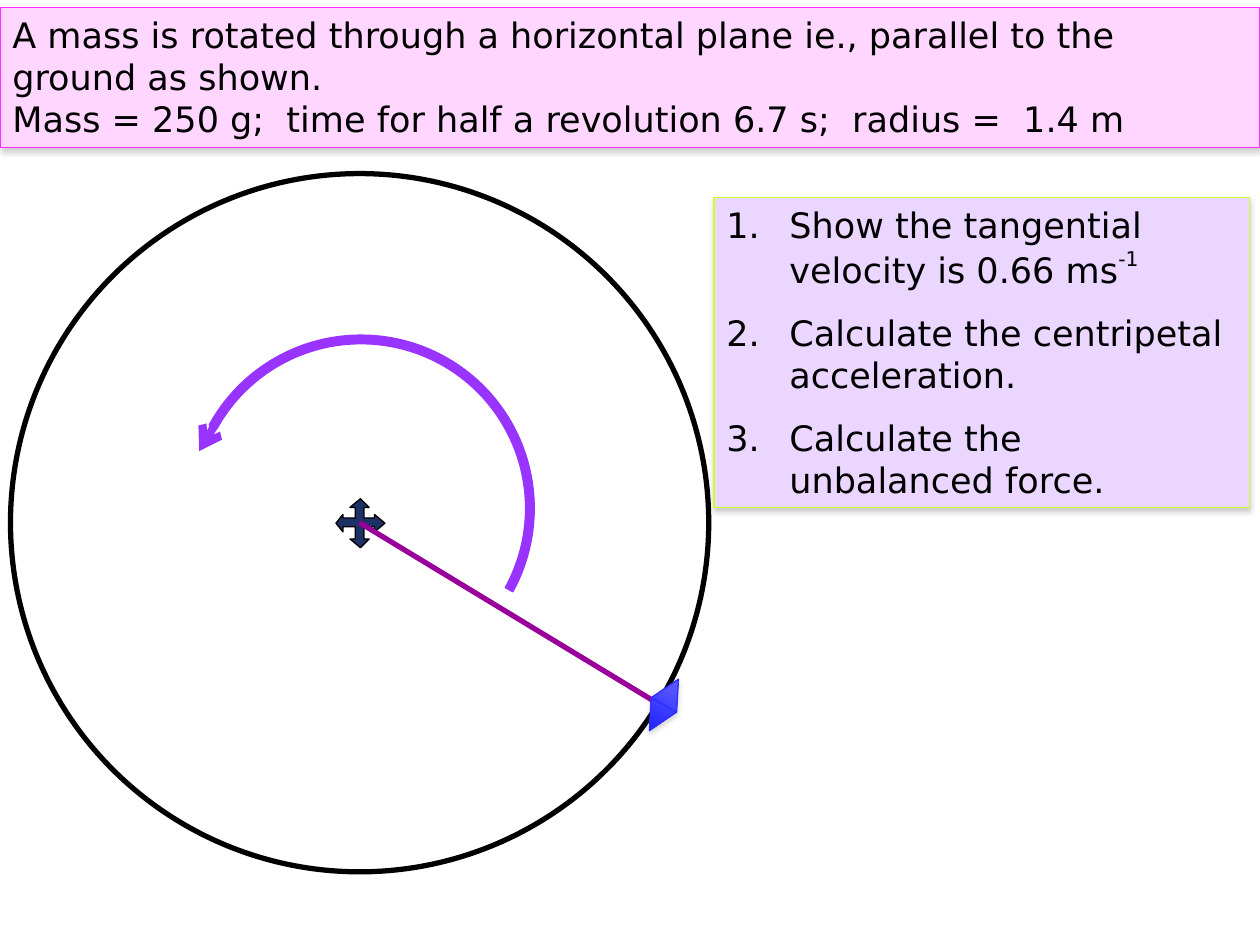
"""Build a slide posing a circular motion problem beside its diagram."""
from lxml import etree
from pptx import Presentation
from pptx.dml.color import RGBColor
from pptx.enum import shapes, text
from pptx.oxml import ns
from pptx.util import Pt

BLACK = RGBColor(0x00, 0x00, 0x00)
NAVY = RGBColor(0x1C, 0x32, 0x64)
PLUM = RGBColor(0x99, 0x00, 0x99)
VIOLET = RGBColor(0x99, 0x33, 0xFF)
LIGHT_BLUE = RGBColor(0x6D, 0x6D, 0xFF)
DEEP_BLUE = RGBColor(0x14, 0x14, 0xFF)
BLUE = RGBColor(0x2D, 0x2D, 0xFE)
PINK = RGBColor(0xFF, 0xD6, 0xFF)
MAGENTA = RGBColor(0xFE, 0x2D, 0xFE)
LILAC = RGBColor(0xEB, 0xD6, 0xFF)
LIME = RGBColor(0xCA, 0xFE, 0x2D)

TEXT_FORMAT = {"name": "DejaVu Sans", "size": Pt(20)}
FRAME_FORMAT = {
    "word_wrap": True,
    "auto_size": text.MSO_AUTO_SIZE.SHAPE_TO_FIT_TEXT,
    "vertical_anchor": text.MSO_ANCHOR.TOP,
}
BOXES = [
    {
        "place": (0, 4.3, 720, 80), "fill": PINK, "line": MAGENTA,
        "numbered": False, "gaps": (0, 6),
        "paragraphs": [
            ("A mass is rotated through a horizontal plane ie., parallel to the ground as shown.", ""),
            ("Mass = 250 g;  time for half a revolution 6.7 s;  radius =  1.4 m", ""),
        ],
    },
    {
        "place": (408, 113, 306, 177), "fill": LILAC, "line": LIME,
        "numbered": True, "gaps": (12, 12, 12),
        "paragraphs": [
            ("Show the tangential velocity is 0.66 ms", "-1"),
            ("Calculate the centripetal acceleration.", ""),
            ("Calculate the unbalanced force.", ""),
        ],
    },
]
CENTRE = (205.5, 298.7)
ORBIT_RADIUS = 199.5
MASS = (379.4, 402.8)
PIVOT_ARM = [(0, -14), (-5.2, -9), (-2.6, -9), (-2.6, -2.6), (-9, -2.6), (-9, -5.2)]


def add_element(parent, tag, **attributes):
    element = etree.SubElement(parent, ns.qn(tag))
    for name, value in attributes.items():
        element.set(name, str(value))
    return element


def add_shadow(shape, opacity, distance):
    effects = add_element(shape._element.spPr, "a:effectLst")
    shadow = add_element(effects, "a:outerShdw", blurRad=Pt(3.1), dist=Pt(distance),
                         dir=90 * 60000, rotWithShape=0)
    colour = add_element(shadow, "a:srgbClr", val="808080")
    add_element(colour, "a:alpha", val=opacity * 1000)


def style_shape(shape, fill, line, width=0.75):
    shape.line.color.rgb = line
    shape.line.width = Pt(width)
    if fill is None:
        shape.fill.background()
    else:
        shape.fill.solid()
        shape.fill.fore_color.rgb = fill


def add_preset(parent, kind, place, fill, line, width=0.75, rotation=0):
    shape = parent.add_shape(kind, *map(Pt, place))
    style_shape(shape, fill, line, width)
    shape.rotation = rotation
    return shape


def add_line(parent, start, end, colour, width):
    line = parent.add_connector(shapes.MSO_CONNECTOR.STRAIGHT, *map(Pt, start + end))
    line.line.color.rgb = colour
    line.line.width = Pt(width)
    add_element(line._element.spPr, "a:effectLst")
    return line


def add_pivot(parent):
    points, arm = [], PIVOT_ARM
    for _ in range(4):
        points += [(CENTRE[0] + x, CENTRE[1] + y) for x, y in arm]
        arm = [(y, -x) for x, y in arm]
    builder = parent.build_freeform(*points[0], scale=Pt(1))
    builder.add_line_segments(points[1:], close=True)
    pivot = builder.convert_to_shape()
    style_shape(pivot, NAVY, BLACK)
    pivot.shadow.inherit = False


def add_orbit(parent):
    left, top = (value - ORBIT_RADIUS for value in CENTRE)
    orbit = add_preset(parent, shapes.MSO_SHAPE.OVAL,
                       (left, top, 2 * ORBIT_RADIUS, 2 * ORBIT_RADIUS), None, BLACK, 3)
    orbit.shadow.inherit = False
    add_pivot(parent)
    add_line(parent, CENTRE, (380.2, 404.6), PLUM, 3)
    width, height = 16.6, 33.8
    mass = add_preset(parent, shapes.MSO_SHAPE.FLOWCHART_SORT,
                      (MASS[0] - width / 2, MASS[1] - height / 2, width, height),
                      DEEP_BLUE, BLUE, rotation=29.5)
    mass.fill.gradient()
    mass.fill.gradient_angle = 270
    for stop, colour in zip(mass.fill.gradient_stops, (LIGHT_BLUE, DEEP_BLUE)):
        stop.color.rgb = colour
    for stop, position in zip(mass.fill.gradient_stops, (0, 1)):
        stop.position = position
    add_shadow(mass, 35, 1.8)


def add_direction(parent):
    arc = add_preset(parent, shapes.MSO_SHAPE.BLOCK_ARC, (107.3, 191.5, 198, 198),
                     VIOLET, VIOLET, rotation=28.8)
    for index, value in enumerate((108, 0, 0.025)):
        arc.adjustments[index] = value
    arc.shadow.inherit = False
    tip = add_line(parent, (124.6, 239.8), (113.8, 257.8), VIOLET, 4.5)
    add_element(tip.line._get_or_add_ln(), "a:tailEnd", type="arrow")


def add_run(paragraph, words):
    run = paragraph.add_run()
    run.text = words
    for name, value in TEXT_FORMAT.items():
        setattr(run.font, name, value)
    run.font.color.rgb = BLACK
    return run


def add_box(parent, box):
    shape = add_preset(parent, shapes.MSO_SHAPE.RECTANGLE, box["place"], box["fill"], box["line"])
    add_shadow(shape, 38, 1.6)
    frame = shape.text_frame
    for name, value in FRAME_FORMAT.items():
        setattr(frame, name, value)
    for index, ((words, superscript), gap) in enumerate(zip(box["paragraphs"], box["gaps"])):
        paragraph = frame.add_paragraph() if index else frame.paragraphs[0]
        paragraph.alignment = text.PP_ALIGN.LEFT
        paragraph.space_after = Pt(gap)
        if box["numbered"]:
            properties = paragraph._p.get_or_add_pPr()
            properties.set("marL", str(Pt(36)))
            properties.set("indent", str(Pt(-36)))
            add_element(properties, "a:buFont", typeface=TEXT_FORMAT["name"])
            add_element(properties, "a:buAutoNum", type="arabicPeriod")
        add_run(paragraph, words)
        if superscript:
            add_run(paragraph, superscript).font._element.set("baseline", "50000")


def main():
    presentation = Presentation()
    presentation.slide_width, presentation.slide_height = Pt(720), Pt(540)
    slide = presentation.slides.add_slide(presentation.slide_layouts[6])
    add_orbit(slide.shapes.add_group_shape().shapes)
    add_direction(slide.shapes.add_group_shape().shapes)
    for box in BOXES:
        add_box(slide.shapes, box)
    presentation.save("out.pptx")


if __name__ == "__main__":
    main()
